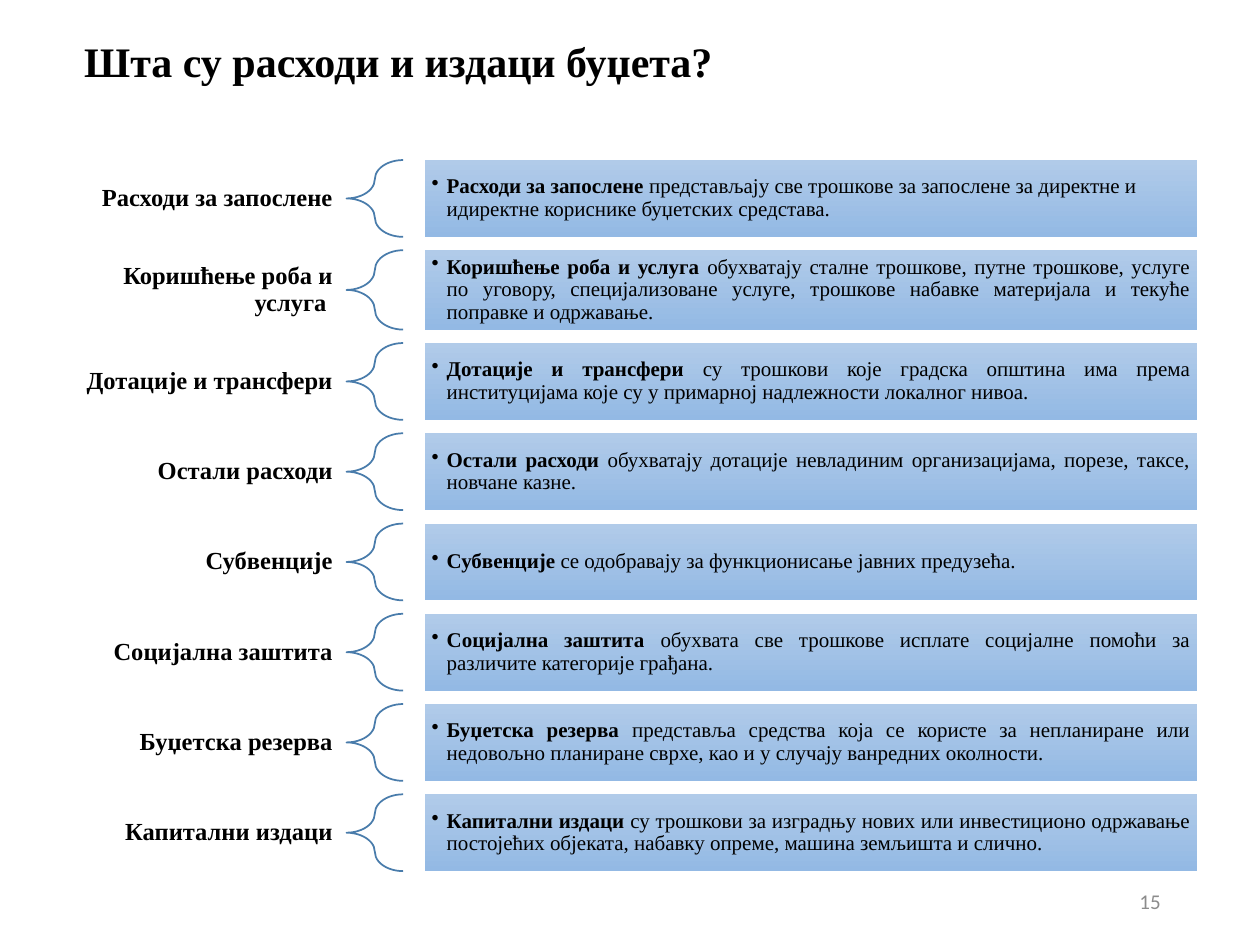
from lxml import etree
from pptx import Presentation, util as u
from pptx.dml import color
from pptx.enum import shapes, text
from pptx.oxml import ns

COLORS = {"text": "000000", "number": "8C8C8C", "brace": "497CAB",
          "band_top": "B1CBE9", "band_bottom": "93B9E4"}
COLUMNS, ROWS = 80, 60
FIRST_ROW, PITCH, BAND_HEIGHT, EXTRA = 10.16, 5.73, 4.88, 0.16
TALL_BAND = 1

EXPENSES = [
    ("Расходи за запослене", "представљају све трошкове за запослене за директне и идиректне кориснике буџетских средстава."),
    ("Коришћење роба и услуга ", "обухватају сталне трошкове, путне трошкове, услуге по уговору, специјализоване услуге, трошкове набавке материјала и текуће поправке и одржавање."),
    ("Дотације и трансфери", "су трошкови које градска општина има према институцијама које су у примарној надлежности локалног нивоа."),
    ("Остали расходи", "обухватају дотације невладиним организацијама, порезе, таксе, новчане казне."),
    ("Субвенције", "сe одобравају за функционисање јавних предузећа."),
    ("Социјална заштита", "обухвата све трошкове исплате социјалне помоћи за различите категорије грађана."),
    ("Буџетска резерва", "представља средства која се користе за непланиране или недовољно планиране сврхе, као и у случају ванредних околности."),
    ("Капитални издаци", "су трошкови за изградњу нових или инвестиционо одржавање постојећих објеката, набавку опреме, машина земљишта и слично."),
]


def rgb(name):
    return color.RGBColor.from_string(COLORS[name])


def apply(target, values):
    for name, value in values.items():
        setattr(target, name, value)


class BudgetSlide:
    serif = "Times New Roman"

    def __init__(self, presentation):
        self.column = presentation.slide_width / COLUMNS
        self.row = presentation.slide_height / ROWS
        self.slide = presentation.slides.add_slide(presentation.slide_layouts[6])

    def place(self, left, top, width, height):
        return (round(left * self.column), round(top * self.row),
                round(width * self.column), round(height * self.row))

    def fill_text(self, shape, runs, size, align, font=serif, ink="text",
                  anchor=text.MSO_ANCHOR.MIDDLE, spacing=0.9, insets=(0.1, 0.05), bullet=False):
        side, edge = map(u.Inches, insets)
        frame = shape.text_frame
        apply(frame, {"word_wrap": True, "vertical_anchor": anchor,
                      "margin_left": side, "margin_right": side,
                      "margin_top": edge, "margin_bottom": edge})
        paragraph = frame.paragraphs[0]
        if bullet:
            properties = paragraph._p.get_or_add_pPr()
            properties.set("marL", str(u.Inches(0.12)))
            properties.set("indent", str(-u.Inches(0.12)))
            etree.SubElement(properties, ns.qn("a:buChar")).set("char", "•")
        apply(paragraph, {"alignment": align, "line_spacing": spacing})
        for words, bold in runs:
            run = paragraph.add_run()
            run.text = words
            apply(run.font, {"name": font, "size": u.Pt(size), "bold": bold})
            run.font.color.rgb = rgb(ink)

    def label(self, box, words, size, align=text.PP_ALIGN.RIGHT, bold=True, **style):
        shape = self.slide.shapes.add_textbox(*self.place(*box))
        self.fill_text(shape, [(words, bold)], size, align, **style)

    def brace(self, box):
        shape = self.slide.shapes.add_shape(shapes.MSO_SHAPE.LEFT_BRACE, *self.place(*box))
        shape.shadow.inherit = False
        shape.adjustments[0] = 0.35
        shape.fill.background()
        shape.line.color.rgb = rgb("brace")
        shape.line.width = u.Pt(1)

    def band(self, box, runs, align):
        shape = self.slide.shapes.add_shape(shapes.MSO_SHAPE.RECTANGLE, *self.place(*box))
        shape.shadow.inherit = False
        shape.line.fill.background()
        shape.fill.gradient()
        shape.fill.gradient_angle = 270
        for stop, name, position in zip(shape.fill.gradient_stops, ("band_top", "band_bottom"), (0, 1)):
            stop.color.rgb = rgb(name)
            stop.position = position
        self.fill_text(shape, runs, 12, align, insets=(0.05, 0.05), bullet=True)


def main():
    presentation = Presentation()
    apply(presentation, {"slide_width": u.Inches(10), "slide_height": u.Inches(7.5)})
    budget = BudgetSlide(presentation)
    budget.label((4.56, 2, 72, 7.44), "Шта су расходи и издаци буџета?", 24,
                 text.PP_ALIGN.LEFT, anchor=text.MSO_ANCHOR.TOP, insets=(0.1, 0.08))
    budget.label((56.48, 55.6, 18, 3.2), "15", 12, bold=False,
                 font="Calibri", ink="number", spacing=1.0)
    for index, (name, meaning) in enumerate(EXPENSES):
        top = FIRST_ROW + index * PITCH + (EXTRA if index > TALL_BAND else 0)
        height = BAND_HEIGHT + (EXTRA if index == TALL_BAND else 0)
        align = text.PP_ALIGN.JUSTIFY if index else text.PP_ALIGN.LEFT
        budget.label((4, top, 18, height), name, 14, insets=(0.11, 0.04))
        budget.brace((22, top, 3.6, height))
        budget.band((27, top, 49, height), [(name.strip() + " ", True), (meaning, False)], align)
    presentation.save("out.pptx")


if __name__ == "__main__":
    main()
